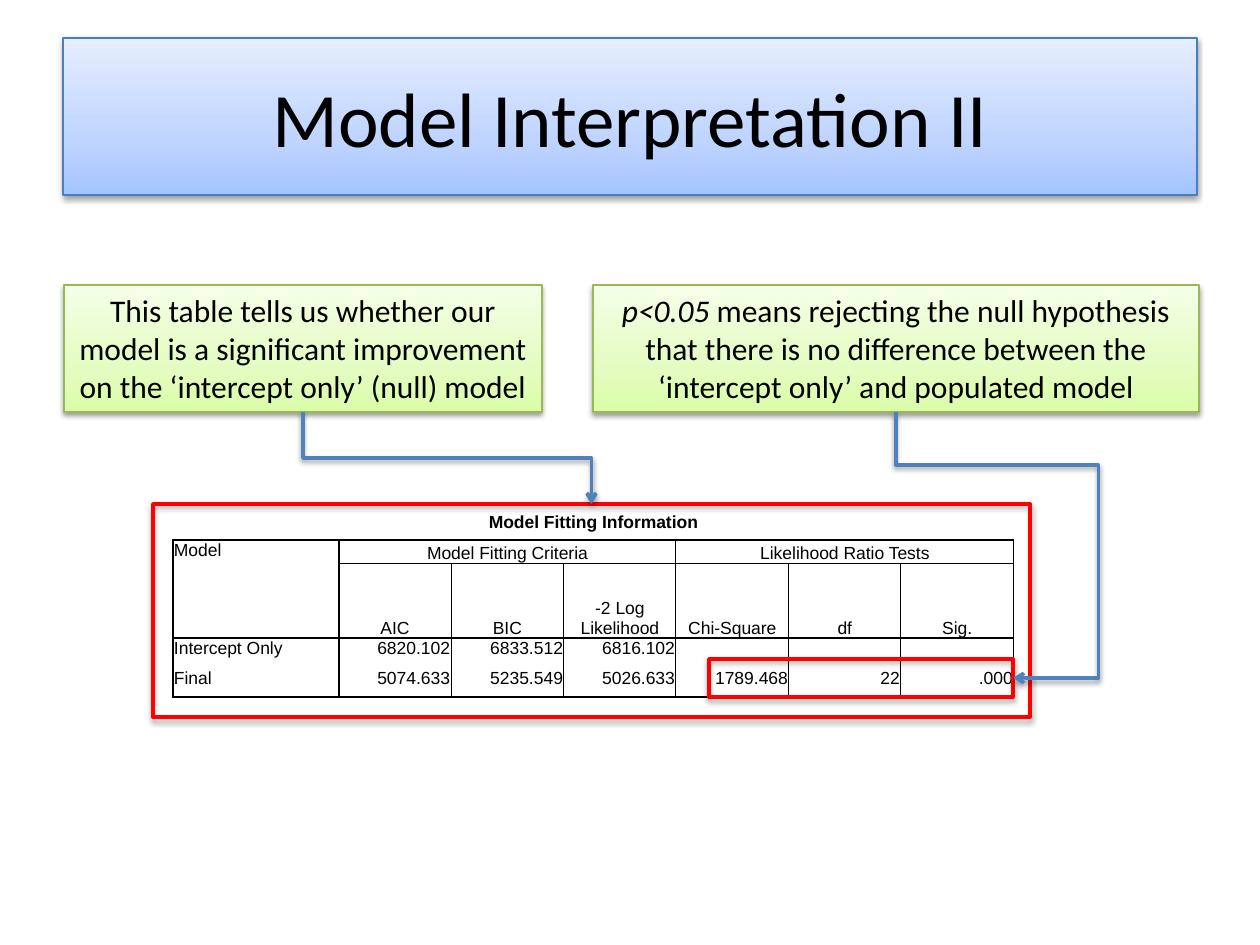
import copy
from dataclasses import dataclass

import pptx
import pptx.dml.color
import pptx.enum.shapes
import pptx.enum.text
import pptx.oxml
import pptx.oxml.ns
import pptx.util

PX = 914400 / 126
ALIGN = pptx.enum.text.PP_ALIGN
ANCHOR = pptx.enum.text.MSO_ANCHOR
SHAPE = pptx.enum.shapes.MSO_SHAPE
qn = pptx.oxml.ns.qn
NS = pptx.oxml.ns.nsdecls("a")


@dataclass(frozen=True)
class Theme:
    ink: str = "000000"
    accent: str = "FF0000"
    arrow: str = "4F81BD"
    title_line: str = "4B7EBC"
    title_fill: tuple = ((0, "A4C4FF"), (0.35, "BFD4FF"), (1, "E6EEFF"))
    note_line: str = "98B955"
    note_fill: tuple = ((0, "DAFDA7"), (0.35, "E4FCC2"), (1, "F5FFE7"))
    body_font: str = "Calibri"
    table_font: str = "Arial"
    title_size: int = 44
    note_size: int = 18
    table_size: int = 10
    thin: float = 0.75
    thick: float = 2


def emu(px):
    return pptx.util.Emu(round(px * PX))


def rgb(color):
    return pptx.dml.color.RGBColor.from_string(color)


def add_text(p, text, *, size, font, color, bold=False, italic=False, align=ALIGN.CENTER):
    p.alignment = align
    r = p.add_run()
    r.text = text
    r.font.size = pptx.util.Pt(size)
    r.font.name = font
    r.font.color.rgb = rgb(color)
    r.font.bold = bold
    r.font.italic = italic


class Slide:
    def __init__(self, prs, theme):
        self.theme = theme
        self.s = prs.slides.add_slide(prs.slide_layouts[6])

    def shadow(self, sp, alpha=38, dist=1.6):
        for old in sp._element.spPr.findall(qn("a:effectLst")):
            sp._element.spPr.remove(old)
        sp._element.spPr.append(pptx.oxml.parse_xml(
            f'<a:effectLst {NS}><a:outerShdw blurRad="{pptx.util.Pt(3.1)}" '
            f'dist="{pptx.util.Pt(dist)}" dir="5400000" rotWithShape="0">'
            f'<a:srgbClr val="{self.theme.ink}"><a:alpha val="{alpha * 1000}"/>'
            '</a:srgbClr></a:outerShdw></a:effectLst>'))

    def rect(self, box, line, width):
        sp = self.s.shapes.add_shape(SHAPE.RECTANGLE, *map(emu, box))
        sp.shadow.inherit = False
        sp.line.color.rgb = rgb(line)
        sp.line.width = pptx.util.Pt(width)
        return sp

    def panel(self, box, runs, size, line, stops, grow=False):
        sp = self.rect(box, line, self.theme.thin)
        sp.fill.gradient()
        sp.fill.gradient_angle = 90
        gs = sp._element.spPr.find(".//" + qn("a:gsLst"))
        gs.insert(1, copy.deepcopy(gs[0]))
        for stop, (position, color) in zip(sp.fill.gradient_stops, stops):
            stop.position = position
            stop.color.rgb = rgb(color)
        self.shadow(sp)
        tf = sp.text_frame
        tf.word_wrap = True
        tf.vertical_anchor = ANCHOR.MIDDLE
        if grow:
            tf.vertical_anchor = ANCHOR.TOP
            tf.auto_size = pptx.enum.text.MSO_AUTO_SIZE.SHAPE_TO_FIT_TEXT
        for text, italic in runs:
            add_text(tf.paragraphs[0], text, size=size, italic=italic,
                     font=self.theme.body_font, color=self.theme.ink)
        return sp

    def note(self, box, *runs):
        return self.panel(box, runs, self.theme.note_size, self.theme.note_line,
                          self.theme.note_fill, grow=True)

    def outline(self, box):
        sp = self.rect(box, self.theme.accent, self.theme.thick)
        sp.fill.background()
        self.shadow(sp, alpha=35, dist=1.8)
        return sp

    def elbow(self, start, end, side, preset, *adjusts):
        kind = pptx.enum.shapes.MSO_CONNECTOR.ELBOW
        cx = self.s.shapes.add_connector(kind, 0, 0, 0, 0)
        cx.begin_connect(start, 2)
        cx.end_connect(end, side)
        mid_x, mid_y = (cx.begin_x + cx.end_x) // 2, (cx.begin_y + cx.end_y) // 2
        w, h = cx.end_y - cx.begin_y, cx.end_x - cx.begin_x
        cx.left, cx.top, cx.width, cx.height = mid_x - w // 2, mid_y - h // 2, w, h
        spPr = cx._element.spPr
        spPr.xfrm.set("rot", "16200000")
        spPr.xfrm.set("flipH", "1")
        geom = spPr.find(qn("a:prstGeom"))
        geom.set("prst", preset)
        for n, value in enumerate(adjusts, 1):
            geom.find(qn("a:avLst")).append(pptx.oxml.parse_xml(
                f'<a:gd {NS} name="adj{n}" fmla="val {round(value * 100000)}"/>'))
        cx.line.color.rgb = rgb(self.theme.arrow)
        cx.line.width = pptx.util.Pt(self.theme.thick)
        spPr.find(qn("a:ln")).append(pptx.oxml.parse_xml(f'<a:tailEnd {NS} type="arrow"/>'))
        self.shadow(cx)

    def borders(self, cell, widths):
        tcPr = cell._tc.get_or_add_tcPr()
        for n, (side, width) in enumerate(zip(("lnL", "lnR", "lnT", "lnB"), widths)):
            paint = (f'<a:solidFill><a:srgbClr val="{self.theme.ink}"/></a:solidFill>'
                     if width else '<a:noFill/>')
            tcPr.insert(n, pptx.oxml.parse_xml(
                f'<a:{side} {NS} w="{pptx.util.Pt(width)}">{paint}</a:{side}>'))

    def table(self, x, y, cols, rows, data, spans, h_lines, v_lines):
        t = self.theme
        box = map(emu, (x, y, sum(cols), sum(rows)))
        tbl = self.s.shapes.add_table(len(rows), len(cols), *box).table
        tbl.first_row = tbl.horz_banding = False
        style = tbl._tbl.tblPr.find(qn("a:tableStyleId"))
        style.text = "{2D5ABB26-0587-4C30-8999-92F81FD0307C}"
        for col, width in zip(tbl.columns, cols):
            col.width = emu(width)
        for row, height in zip(tbl.rows, rows):
            row.height = emu(height)
        for (r, c), (rs, cs) in spans.items():
            tbl.cell(r, c).merge(tbl.cell(r + rs - 1, c + cs - 1))
        for r in range(len(rows)):
            for c in range(len(cols)):
                cell = tbl.cell(r, c)
                cell.fill.background()
                cell.margin_left = cell.margin_right = cell.margin_top = emu(1)
                cell.margin_bottom = 0
                p = cell.text_frame.paragraphs[0]
                text = data[r][c]
                if text:
                    align = ALIGN.LEFT if r and not c else ALIGN.RIGHT if r > 2 else ALIGN.CENTER
                    add_text(p, text, size=t.table_size, font=t.table_font,
                             color=t.ink, bold=r == 0, align=align)
                else:
                    p._p.append(pptx.oxml.parse_xml(
                        f'<a:endParaRPr {NS} sz="{t.table_size * 100}"/>'))
                if r == 0:
                    cell.vertical_anchor = ANCHOR.MIDDLE
                elif r < 3 and c:
                    cell.vertical_anchor = ANCHOR.BOTTOM
                if not cell.is_spanned:
                    rs, cs = spans.get((r, c), (1, 1))
                    sides = (v_lines[c], v_lines[c + cs]) if r else (0, 0)
                    self.borders(cell, (*sides, h_lines[r], h_lines[r + rs]))


def main():
    prs = pptx.Presentation()
    prs.slide_width, prs.slide_height = emu(1260), emu(945)
    t = Theme()
    s = Slide(prs, t)
    s.panel((63, 38, 1134, 157), [("Model Interpretation II", False)],
            t.title_size, t.title_line, t.title_fill)
    data = [
        ["Model Fitting Information"] + [""] * 6,
        ["Model", "Model Fitting Criteria", "", "", "Likelihood Ratio Tests", "", ""],
        ["", "AIC", "BIC", "-2 Log Likelihood", "Chi-Square", "df", "Sig."],
        ["Intercept Only", "6820.102", "6833.512", "6816.102", "", "", ""],
        ["Final", "5074.633", "5235.549", "5026.633", "1789.468", "22", ".000"],
    ]
    s.table(173, 504, [166] + [112, 113] * 3, [36, 23, 75, 30, 29], data,
            spans={(0, 0): (1, 7), (1, 0): (2, 1), (1, 1): (1, 3), (1, 4): (1, 3)},
            h_lines=[0, 1, 0.5, 1, 0, 1], v_lines=[1, 1] + [0.5] * 5 + [1])
    purpose = s.note((64, 285, 478, 127), (
        "This table tells us whether our model is a significant improvement "
        "on the ‘intercept only’ (null) model", False))
    meaning = s.note((593, 285, 606, 127), ("p<0.05", True), (
        " means rejecting the null hypothesis that there is no difference "
        "between the ‘intercept only’ and populated model", False))
    frame = s.outline((153, 504, 877, 213))
    s.elbow(purpose, frame, 0, "bentConnector3", 0.5)
    result = s.outline((709, 659, 304, 38))
    s.elbow(meaning, result, 3, "bentConnector4", 0.2, 1.73)
    prs.save("out.pptx")


if __name__ == "__main__":
    main()
